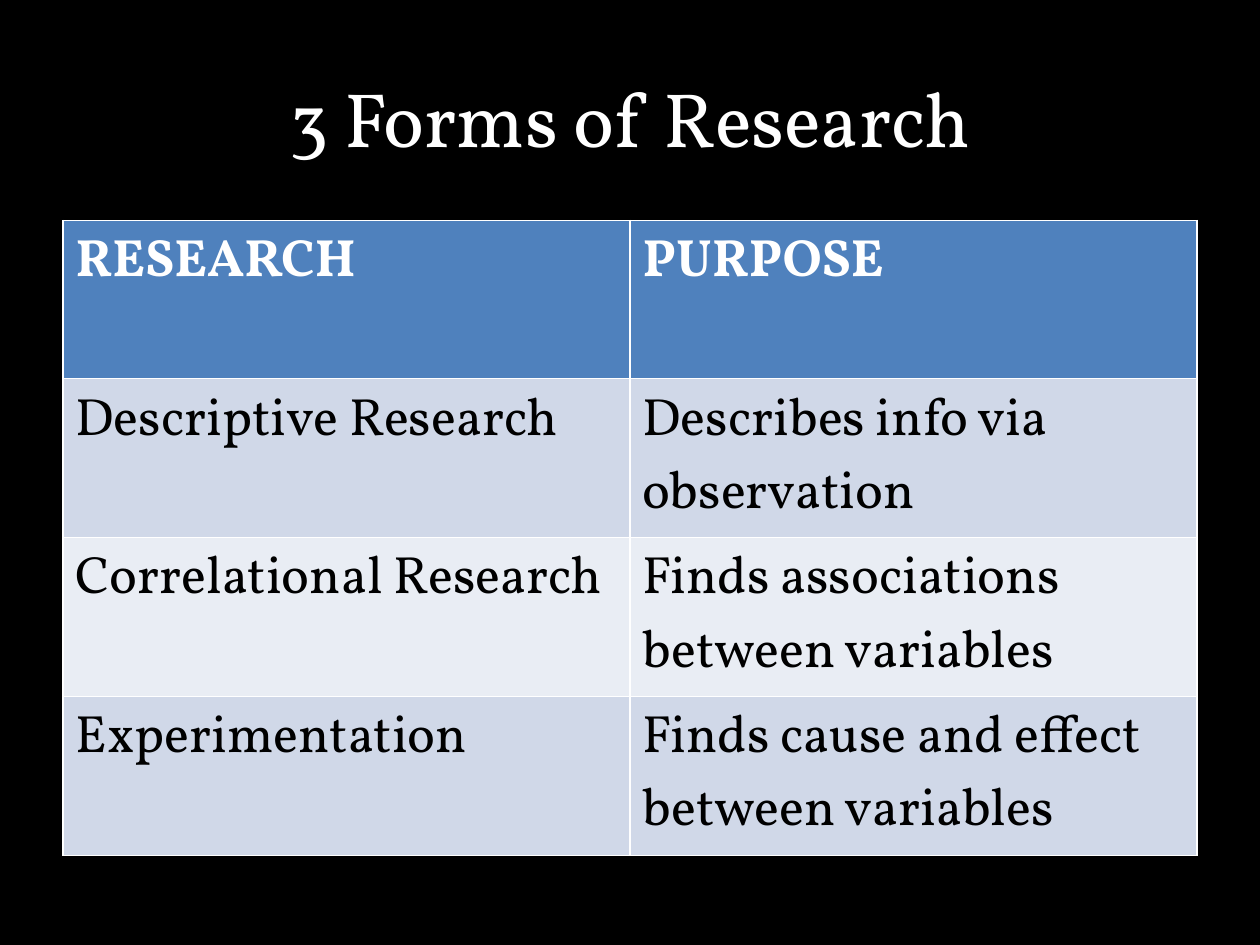
"""Build a slide with a table of three forms of research."""
from pptx import Presentation
from pptx.dml.color import RGBColor
from pptx.enum.text import MSO_ANCHOR, PP_ALIGN
from pptx.util import Inches, Pt

MIDDLE = MSO_ANCHOR.MIDDLE
CENTER = PP_ALIGN.CENTER
BLACK = RGBColor(0x00, 0x00, 0x00)
WHITE = RGBColor(0xFF, 0xFF, 0xFF)
HEADER = RGBColor(0x4F, 0x81, 0xBD)
BANDS = (RGBColor(0xE9, 0xED, 0xF4), RGBColor(0xD0, 0xD8, 0xE8))
ROWS = (
    ("RESEARCH", "PURPOSE"),
    ("Descriptive Research", "Describes info via observation"),
    ("Correlational Research", "Finds associations between variables"),
    ("Experimentation", "Finds cause and effect between variables"),
)


class Deck:
    """Hold the style and the current slide."""

    font = "Vollkorn"
    title_size = Pt(44)
    cell_size = Pt(30)

    def __init__(self, width, height):
        """Open a presentation of the given size."""
        self.prs = Presentation()
        self.prs.slide_width, self.prs.slide_height = width, height
        self.s = None

    def add_slide(self, color):
        """Start a title-only slide on a plain background."""
        self.s = self.prs.slides.add_slide(self.prs.slide_layouts[5])
        fill = self.s.background.fill
        fill.solid()
        fill.fore_color.rgb = color

    def box(self, x, y, w, h):
        """Turn shares of the slide's size into lengths."""
        sw, sh = self.prs.slide_width, self.prs.slide_height
        return round(x * sw), round(y * sh), round(w * sw), round(h * sh)

    def add_text(self, p, text, size, color, bold=False):
        """Add one styled run to a paragraph."""
        r = p.add_run()
        r.text = text
        r.font.name, r.font.size, r.font.bold = self.font, size, bold
        r.font.color.rgb = color

    def title(self, text, *shares):
        """Place and fill the title placeholder."""
        sp = self.s.shapes.title
        sp.left, sp.top, sp.width, sp.height = self.box(*shares)
        tf = sp.text_frame
        tf.vertical_anchor = MIDDLE
        p = tf.paragraphs[0]
        p.alignment = CENTER
        self.add_text(p, text, self.title_size, WHITE)

    def table(self, rows, *shares):
        """Add an evenly divided table with a header and banded rows."""
        frame = self.s.shapes.add_table(len(rows), len(rows[0]), *self.box(*shares))
        for i, row in enumerate(rows):
            head = i == 0
            for j, text in enumerate(row):
                cell = frame.table.cell(i, j)
                cell.fill.solid()
                cell.fill.fore_color.rgb = HEADER if head else BANDS[i % 2]
                color = WHITE if head else BLACK
                p = cell.text_frame.paragraphs[0]
                self.add_text(p, text, self.cell_size, color, head)


def main():
    """Build and save the slide."""
    deck = Deck(Inches(10), Inches(7.5))
    deck.add_slide(BLACK)
    deck.title("3 Forms of Research", 0.05, 0.04, 0.9, 1 / 6)
    deck.table(ROWS, 0.05, 7 / 30, 0.9, 0.67)
    deck.prs.save("out.pptx")


if __name__ == "__main__":
    main()
